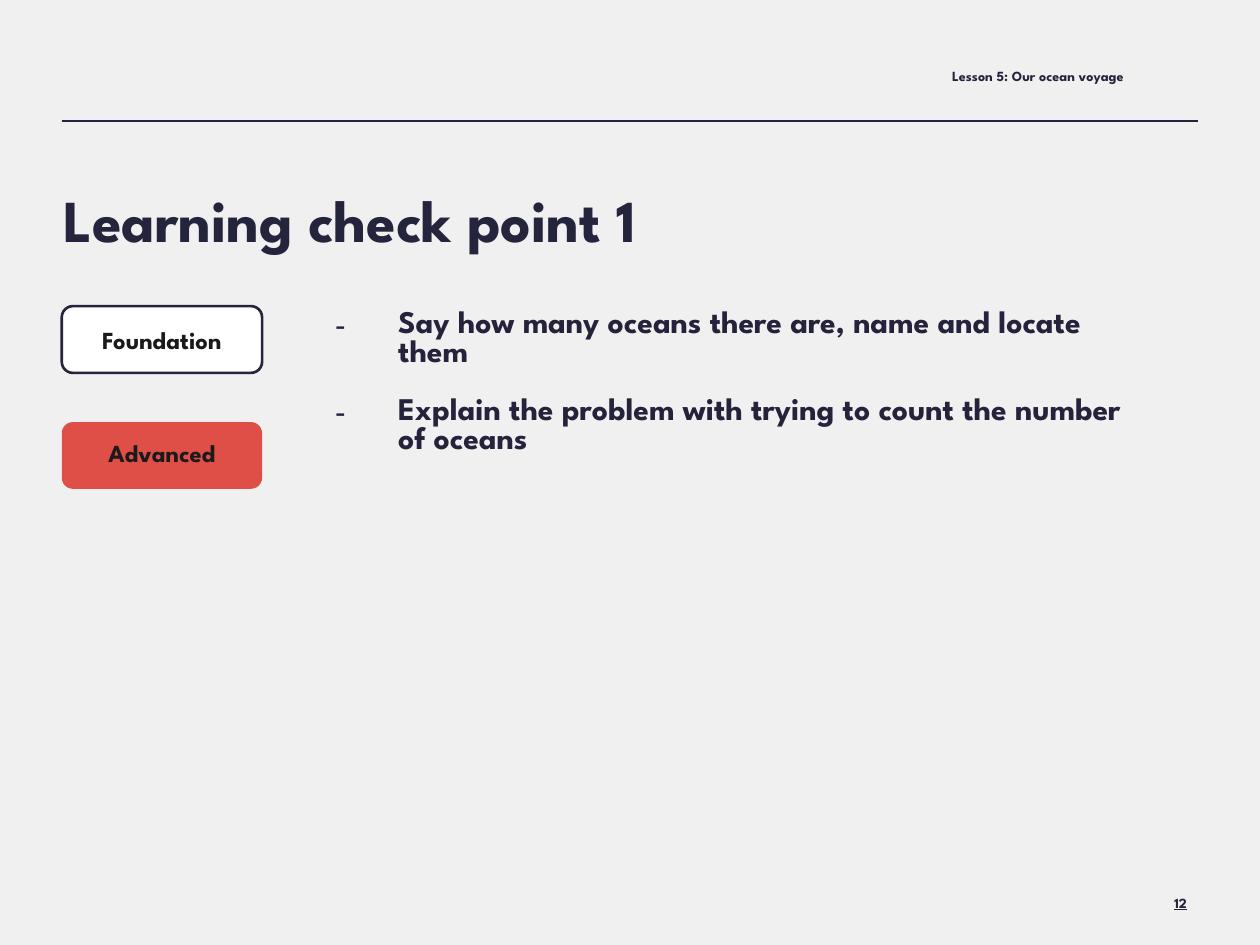
"""Build the lesson slide for learning check point 1."""
import pptx
import pptx.dml.color
import pptx.enum.shapes
import pptx.enum.text
import pptx.oxml.ns
import pptx.util
from lxml import etree

Inches, Pt = pptx.util.Inches, pptx.util.Pt
ALIGN = pptx.enum.text.PP_ALIGN
SHAPES = pptx.enum.shapes
MIDDLE = pptx.enum.text.MSO_ANCHOR.MIDDLE

FONT = "League Spartan"
INK, NAVY, BLACK = "25233C", "25243D", "1A1A1A"
TITLE = "Learning check point 1"
LESSON = "Lesson 5: Our ocean voyage"
PAGE = "12"
GOALS = [
    "Say how many oceans there are, name and locate them",
    "Explain the problem with trying to count the number of oceans",
]
GOAL_ROWS = [3.4, 0.97, 1.5, 0.57, 0.8]
LEVELS = [
    {"label": "Foundation", "fill": "FFFFFF", "line": NAVY, "top_inset": 0.05},
    {"label": "Advanced", "fill": "E04F47", "line": None, "top_inset": 0},
]
LEFT, RIGHT = 0.49, 9.51
LEVEL_TOP, LEVEL_STEP = 2.43, 0.92


def rgb(value):
    return pptx.dml.color.RGBColor.from_string(value)


def box(left, top, width, height):
    return [Inches(length) for length in (left, top, width, height)]


def set_insets(frame, left, top, right, bottom):
    frame.margin_left, frame.margin_top = Inches(left), Inches(top)
    frame.margin_right, frame.margin_bottom = Inches(right), Inches(bottom)


def write(paragraph, text, size, color, align=ALIGN.LEFT):
    paragraph.alignment = align
    run = paragraph.add_run()
    run.text = text
    run.font.name, run.font.size, run.font.bold = FONT, Pt(size), True
    run.font.color.rgb = rgb(color)
    return run


def add_dash(paragraph):
    properties = paragraph._p.get_or_add_pPr()
    properties.set("marL", str(Inches(0.5)))
    properties.set("indent", str(-Inches(0.5)))
    qn = pptx.oxml.ns.qn
    etree.SubElement(properties, qn("a:buFont"), typeface="Arial")
    etree.SubElement(properties, qn("a:buChar"), char="-")


def add_goals(slide):
    area = box(2.56, 2.42, 6.67, sum(GOAL_ROWS))
    table = slide.shapes.add_table(len(GOAL_ROWS), 1, *area).table
    table.first_row = table.horz_banding = False
    style = table._tbl.tblPr.find(pptx.oxml.ns.qn("a:tableStyleId"))
    style.text = "{2D5ABB26-0587-4C30-8999-92F81FD0307C}"
    for index, height in enumerate(GOAL_ROWS):
        table.rows[index].height = Inches(height)
        table.cell(index, 0).fill.background()
    frame = table.cell(0, 0).text_frame
    for index, goal in enumerate(GOALS):
        paragraph = frame.add_paragraph() if index else frame.paragraphs[0]
        add_dash(paragraph)
        if index:
            paragraph.space_before = Pt(16.5)
        write(paragraph, goal, 18, INK)


def add_level(slide, index, level):
    top = LEVEL_TOP + index * LEVEL_STEP
    button = slide.shapes.add_shape(SHAPES.MSO_SHAPE.ROUNDED_RECTANGLE, *box(LEFT, top, 1.59, 0.53))
    button.shadow.inherit = False
    button.fill.solid()
    button.fill.fore_color.rgb = rgb(level["fill"])
    if level["line"]:
        button.line.color.rgb = rgb(level["line"])
        button.line.width = Pt(1.5)
    else:
        button.line.fill.background()
    frame = button.text_frame
    frame.vertical_anchor = MIDDLE
    set_insets(frame, 0.1, level["top_inset"], 0.1, 0)
    frame.paragraphs[0].line_spacing = 0.8
    write(frame.paragraphs[0], level["label"], 14, BLACK, ALIGN.CENTER)


def add_label(slide, area, text, color, align):
    frame = slide.shapes.add_textbox(*box(*area)).text_frame
    frame.word_wrap = True
    return frame, write(frame.paragraphs[0], text, 8, color, align)


def main():
    deck = pptx.Presentation()
    deck.slide_width, deck.slide_height = Inches(10), Inches(7.5)
    slide = deck.slides.add_slide(deck.slide_layouts[5])
    slide.background.fill.solid()
    slide.background.fill.fore_color.rgb = rgb("F0F0F0")

    rule = slide.shapes.add_connector(
        SHAPES.MSO_CONNECTOR.STRAIGHT, Inches(LEFT), Inches(0.96), Inches(RIGHT), Inches(0.96))
    rule.line.color.rgb = rgb("25233F")
    rule.line.width = Pt(1)
    etree.SubElement(rule._element.spPr, pptx.oxml.ns.qn("a:effectLst"))

    add_goals(slide)

    title = slide.shapes.title
    title.left, title.top, title.width, title.height = box(0.45, 1.49, 5.69, 0.57)
    heading = title.text_frame
    heading.auto_size = pptx.enum.text.MSO_AUTO_SIZE.NONE
    heading.vertical_anchor = MIDDLE
    set_insets(heading, 0.05, 0.05, 0.05, 0.05)
    heading.paragraphs[0].line_spacing = 0.9
    write(heading.paragraphs[0], TITLE, 34, NAVY)

    page_frame, page_run = add_label(slide, (9.23, 7.07, 0.28, 0.19), PAGE, NAVY, ALIGN.CENTER)
    set_insets(page_frame, 0.03, 0.03, 0.03, 0.03)
    page_run.font.underline = True

    for index, level in enumerate(LEVELS):
        add_level(slide, index, level)
    add_label(slide, (4.58, 0.49, 4.44, 0.24), LESSON, INK, ALIGN.RIGHT)
    deck.save("out.pptx")


if __name__ == "__main__":
    main()
